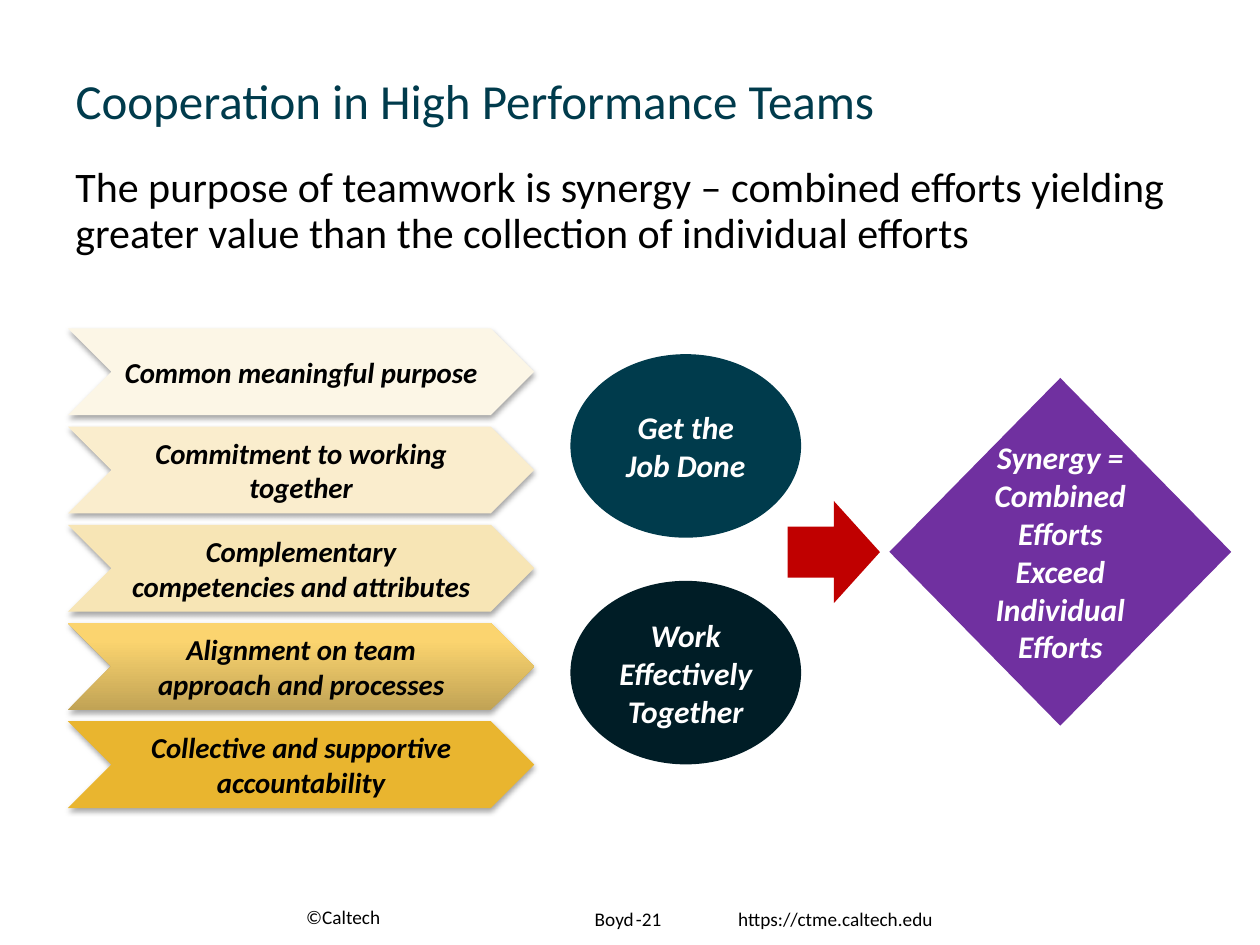
from dataclasses import dataclass

from lxml.etree import SubElement
from pptx import Presentation
from pptx.dml.color import RGBColor
from pptx.enum.shapes import MSO_SHAPE as SHAPE
from pptx.enum.text import MSO_ANCHOR as ANCHOR, MSO_AUTO_SIZE as AUTO, PP_ALIGN as ALIGN
from pptx.oxml.ns import qn
from pptx.util import Cm, Pt


@dataclass(frozen=True)
class Theme:
    font: str = "Calibri"
    black: str = "000000"
    white: str = "FFFFFF"
    teal: str = "003B4C"
    navy: str = "001D26"
    red: str = "C00000"
    purple: str = "7030A0"
    title: float = 28
    body: float = 24
    outcome: float = 18
    factor: float = 16.5
    footer: float = 11


T = Theme()
FACTORS = [
    ("Common meaningful purpose", ["FCF6E6"]),
    ("Commitment to working together", ["FAEDCD"]),
    ("Complementary competencies and attributes", ["F7E5B5"]),
    ("Alignment on team\vapproach and processes", ["C1A355", "FBD46F"]),
    ("Collective and supportive accountability", ["E9B52F"]),
]


def box(x, y, w, h):
    return Cm(x), Cm(y), Cm(w), Cm(h)


def write(sp, text, size, color, align=ALIGN.LEFT, anchor=ANCHOR.MIDDLE, strong=False, spacing=None):
    tf = sp.text_frame
    tf.word_wrap, tf.auto_size, tf.vertical_anchor = True, AUTO.NONE, anchor
    tf.text = text
    p = tf.paragraphs[0]
    p.alignment, p.line_spacing = align, spacing
    p.font.name, p.font.size = T.font, Pt(size)
    p.font.bold = p.font.italic = strong
    p.font.color.rgb = RGBColor.from_string(color)


def add_text(s, place, text, size, **style):
    write(s.shapes.add_textbox(*box(*place)), text, size, T.black, **style)


def add_shape(s, kind, place, colors, text="", size=T.outcome, color=T.white):
    sp = s.shapes.add_shape(kind, *box(*place))
    sp.shadow.inherit = False
    sp.line.fill.background()
    if len(colors) == 1:
        sp.fill.solid()
        sp.fill.fore_color.rgb = RGBColor.from_string(colors[0])
    else:
        sp.fill.gradient()
        sp.fill.gradient_angle = 90
        for stop, rgb, position in zip(sp.fill.gradient_stops, colors, (0, 0.8)):
            stop.color.rgb = RGBColor.from_string(rgb)
            stop.position = position
    if text:
        write(sp, text, size, color, ALIGN.CENTER, strong=True)
    return sp


def add_shadow(sp):
    effects = sp.element.spPr.find(qn("a:effectLst"))
    shadow = SubElement(effects, qn("a:outerShdw"), blurRad=str(Pt(3.1)), dist=str(Pt(1.8)),
                        dir="5400000", rotWithShape="0")
    rgb = SubElement(shadow, qn("a:srgbClr"), val=T.black)
    SubElement(rgb, qn("a:alpha"), val="35000")


def add_title(s, text):
    sp = s.shapes.title
    sp.left, sp.top, sp.width, sp.height = box(1.27, 0.2, 22.86, 2.54)
    write(sp, text, T.title, T.teal, anchor=ANCHOR.BOTTOM, spacing=0.9)


def add_factors(s):
    for i, (text, colors) in enumerate(FACTORS):
        place = (1.37, 6.62 + 1.98 * i, 9.4, 1.75)
        add_shadow(add_shape(s, SHAPE.CHEVRON, place, colors, text, T.factor, T.black))


def add_outcomes(s):
    add_shape(s, SHAPE.OVAL, (11.5, 7.14, 4.65, 3.7), [T.teal], "Get the Job Done")
    add_shape(s, SHAPE.OVAL, (11.5, 11.71, 4.65, 3.7), [T.navy], "Work Effectively Together")
    add_shape(s, SHAPE.RIGHT_ARROW, (15.88, 10.1, 1.86, 2.06), [T.red])
    synergy = add_shape(s, SHAPE.DIAMOND, (17.93, 7.62, 6.89, 7.01), [T.purple],
                        "Synergy = Combined Efforts Exceed Individual Efforts")
    synergy.text_frame.margin_left = synergy.text_frame.margin_right = 0


def add_footer(s):
    add_text(s, (5.92, 18.21, 2.97, 0.64), "©Caltech", T.footer, anchor=ANCHOR.BOTTOM)
    add_text(s, (9.65, 18.21, 3.38, 0.64), "Boyd", T.footer, align=ALIGN.RIGHT)
    add_text(s, (12.57, 18.21, 1.7, 0.64), "-21", T.footer)
    add_text(s, (14.63, 18.16, 5.13, 0.74), "https://ctme.caltech.edu", T.footer)


def main():
    prs = Presentation()
    prs.slide_width, prs.slide_height = Cm(25.4), Cm(19.05)
    s = prs.slides.add_slide(prs.slide_layouts.get_by_name("Title Only"))
    add_title(s, "Cooperation in High Performance Teams")
    add_text(s, (1.27, 3.23, 22.86, 2.4),
             "The purpose of teamwork is synergy – combined efforts yielding "
             "greater value than the collection of individual efforts",
             T.body, anchor=ANCHOR.TOP, spacing=0.9)
    add_factors(s)
    add_outcomes(s)
    add_footer(s)
    prs.save("out.pptx")


if __name__ == "__main__":
    main()
